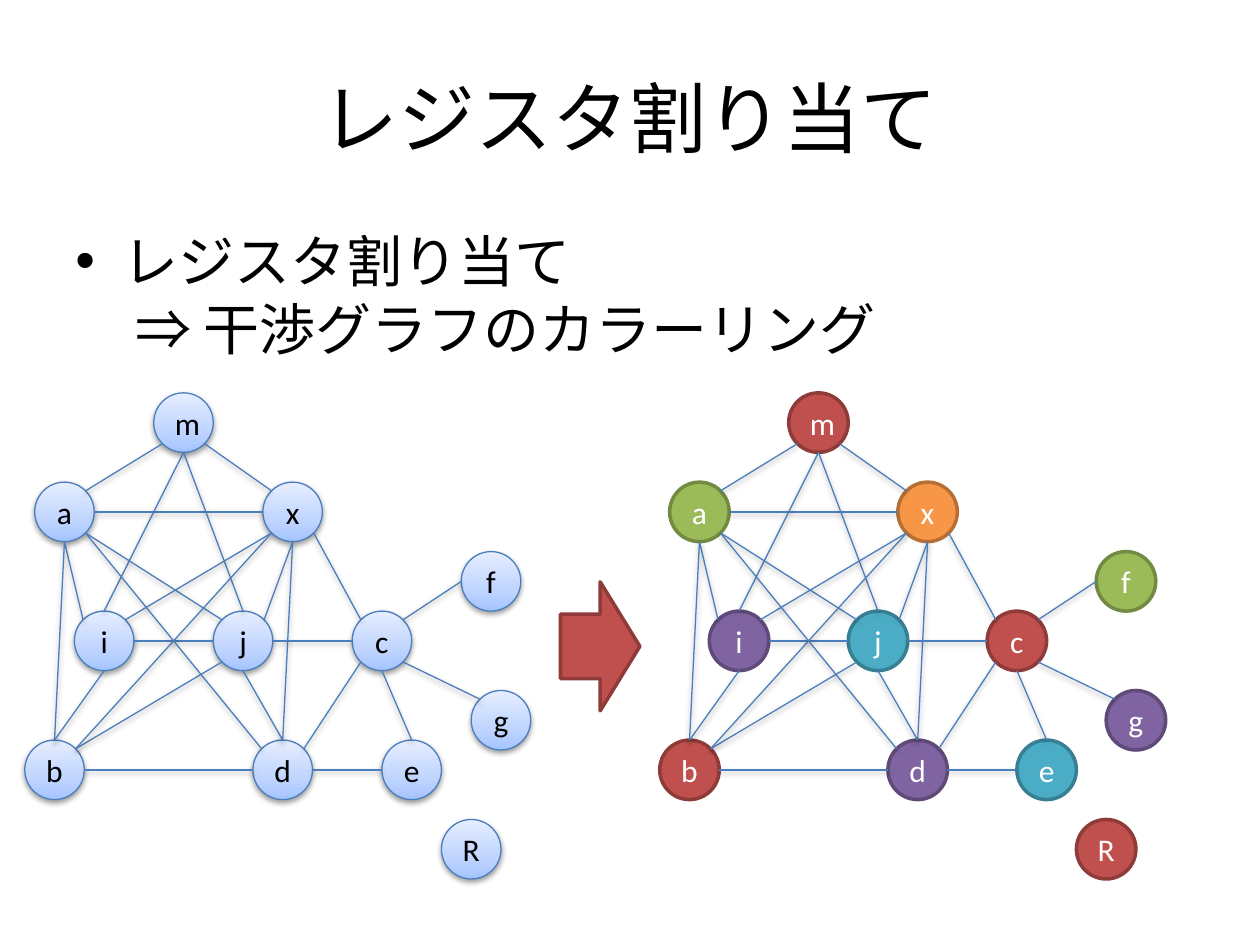
import math

import pptx
import pptx.dml.color
import pptx.enum.shapes
import pptx.enum.text
import pptx.oxml
import pptx.oxml.ns
import pptx.util

Cm = pptx.util.Cm
Pt = pptx.util.Pt
RGB = pptx.dml.color.RGBColor
SHAPE = pptx.enum.shapes.MSO_SHAPE
ALIGN = pptx.enum.text.PP_ALIGN
ANCHOR = pptx.enum.text.MSO_ANCHOR

TITLE = "レジスタ割り当て"
BODY = "レジスタ割り当て\v ⇒ 干渉グラフのカラーリング"
FONT = "Calibri"

BLACK, WHITE = RGB(0, 0, 0), RGB(255, 255, 255)
EDGE_BLUE = RGB(0x4B, 0x7E, 0xBC)
# Register colours: (fill, outline)
RED = RGB(0xC0, 0x50, 0x4D), RGB(0x8E, 0x3B, 0x39)
GREEN = RGB(0x9B, 0xBB, 0x59), RGB(0x73, 0x8A, 0x42)
PURPLE = RGB(0x80, 0x64, 0xA2), RGB(0x5F, 0x4A, 0x78)
TEAL = RGB(0x4B, 0xAC, 0xC6), RGB(0x37, 0x7F, 0x92)
ORANGE = RGB(0xF7, 0x96, 0x46), RGB(0xB7, 0x6F, 0x34)
GRADIENT_STOPS = [(0, "A4C4FF"), (35, "BFD4FF"), (100, "E6EEFF")]

# Node: left and top within its graph (cm), register colour
NODES = {
    "a": (0.7, 1.8, GREEN), "b": (0.5, 7.0, RED), "c": (7.1, 4.4, RED),
    "d": (5.1, 7.0, PURPLE), "e": (7.7, 7.0, TEAL), "f": (9.3, 3.2, GREEN),
    "g": (9.5, 6.0, PURPLE), "i": (1.5, 4.4, PURPLE), "j": (4.3, 4.4, TEAL),
    "m": (3.1, 0, RED), "x": (5.3, 1.8, ORANGE), "R": (8.9, 8.6, RED),
}
# Edge: node and compass point at each end
EDGES = [
    ("m", "SW", "a", "NE"), ("x", "W", "a", "E"), ("x", "NW", "m", "SE"),
    ("x", "S", "j", "NE"), ("j", "W", "i", "E"), ("i", "NW", "a", "S"),
    ("i", "N", "m", "S"), ("j", "N", "m", "S"), ("j", "NW", "a", "SE"),
    ("x", "SW", "i", "NE"), ("a", "S", "b", "N"), ("i", "S", "b", "N"),
    ("j", "SW", "b", "NE"), ("x", "SW", "b", "NE"), ("a", "SE", "d", "NW"),
    ("b", "E", "d", "W"), ("j", "S", "d", "N"), ("x", "S", "d", "N"),
    ("x", "SE", "c", "NW"), ("j", "E", "c", "W"), ("d", "NE", "c", "SW"),
    ("d", "E", "e", "W"), ("c", "S", "e", "N"), ("c", "NE", "f", "W"),
    ("c", "SE", "g", "NW"),
]
COMPASS = ["E", "SE", "S", "SW", "W", "NW", "N", "NE"]
NODE_SIZE = 1.2
GRAPH_TOP = 7.92
GRAPHS = [(0, False), (12.8, True)]  # left (cm), coloured


def add_xml(parent, body):
    """Append one drawing element, written without its namespace."""
    name, rest = body.split(" ", 1)
    element = pptx.oxml.parse_xml(
        f"<a:{name} {pptx.oxml.ns.nsdecls('a')} {rest}")
    parent.append(element)


def add_shadow(item):
    add_xml(item._element.spPr,
            'effectLst ><a:outerShdw blurRad="40000" dist="20000" dir="5400000" '
            'rotWithShape="0"><a:srgbClr val="000000"><a:alpha val="38000"/>'
            '</a:srgbClr></a:outerShdw></a:effectLst>')


def fill_gradient(shape):
    stops = "".join(
        f'<a:gs pos="{position * 1000}"><a:srgbClr val="{color}"/></a:gs>'
        for position, color in GRADIENT_STOPS)
    add_xml(shape._element.spPr,
            f'gradFill rotWithShape="1"><a:gsLst>{stops}</a:gsLst>'
            '<a:lin ang="16200000" scaled="0"/></a:gradFill>')


def set_line(item, color, width):
    item.line.color.rgb = color
    item.line.width = Pt(width)


def write(shape, text, size, color, align, anchor):
    frame = shape.text_frame
    frame.word_wrap = True
    frame.vertical_anchor = anchor
    para = frame.paragraphs[0]
    para.text = text
    para.alignment = align
    para.font.size = Pt(size)
    para.font.name = FONT
    para.font.color.rgb = color
    return para


def add_solid_shape(page, kind, place, colors):
    shape = page.shapes.add_shape(kind, *map(Cm, place))
    shape.shadow.inherit = False
    shape.fill.solid()
    shape.fill.fore_color.rgb = colors[0]
    set_line(shape, colors[1], 2)
    return shape


def add_node(page, name, left, coloured):
    x, y, colors = NODES[name]
    place = left + x, GRAPH_TOP + y, NODE_SIZE, NODE_SIZE
    if coloured:
        shape = add_solid_shape(page, SHAPE.OVAL, place, colors)
    else:
        shape = page.shapes.add_shape(SHAPE.OVAL, *map(Cm, place))
        fill_gradient(shape)
        set_line(shape, EDGE_BLUE, 0.75)
        add_shadow(shape)
    write(shape, name, 18, WHITE if coloured else BLACK,
          ALIGN.CENTER, ANCHOR.MIDDLE)


def rim_point(name, direction, left):
    """Point on a node's circle in a compass direction."""
    x, y, _ = NODES[name]
    angle = COMPASS.index(direction) * math.pi / 4
    radius = NODE_SIZE / 2
    return (Cm(left + x + radius * (1 + math.cos(angle))),
            Cm(GRAPH_TOP + y + radius * (1 + math.sin(angle))))


def add_graph(page, left, coloured):
    for name in NODES:
        add_node(page, name, left, coloured)
    for start, start_side, end, end_side in EDGES:
        edge = page.shapes.add_connector(
            pptx.enum.shapes.MSO_CONNECTOR.STRAIGHT,
            *rim_point(start, start_side, left),
            *rim_point(end, end_side, left))
        set_line(edge, EDGE_BLUE, 0.75)
        add_shadow(edge)


def add_texts(page):
    title = page.shapes.add_textbox(Cm(1.27), Cm(0.76), Cm(22.86), Cm(3.18))
    write(title, TITLE, 44, BLACK, ALIGN.CENTER, ANCHOR.MIDDLE)

    body = page.shapes.add_textbox(Cm(1.27), Cm(4.45), Cm(22.86), Cm(12.57))
    para = write(body, BODY, 32, BLACK, ALIGN.LEFT, ANCHOR.TOP)
    para.space_before = Pt(6.4)
    properties = para._p.get_or_add_pPr()
    properties.set("marL", str(Cm(0.95)))
    properties.set("indent", str(-Cm(0.95)))
    bullet_font = pptx.oxml.parse_xml(
        f'<a:buFont {pptx.oxml.ns.nsdecls("a")} typeface="Arial"/>')
    bullet = pptx.oxml.parse_xml(
        f'<a:buChar {pptx.oxml.ns.nsdecls("a")} char="•"/>')
    defaults = properties.find(pptx.oxml.ns.qn("a:defRPr"))
    defaults.addprevious(bullet_font)
    defaults.addprevious(bullet)


def main():
    deck = pptx.Presentation()
    deck.slide_width, deck.slide_height = Cm(25.4), Cm(19.05)
    page = deck.slides.add_slide(deck.slide_layouts[6])
    add_texts(page)
    for left, coloured in GRAPHS:
        add_graph(page, left, coloured)
    add_solid_shape(page, SHAPE.RIGHT_ARROW, (11.3, 11.73, 1.6, 2.6), RED)
    deck.save("out.pptx")


if __name__ == "__main__":
    main()
